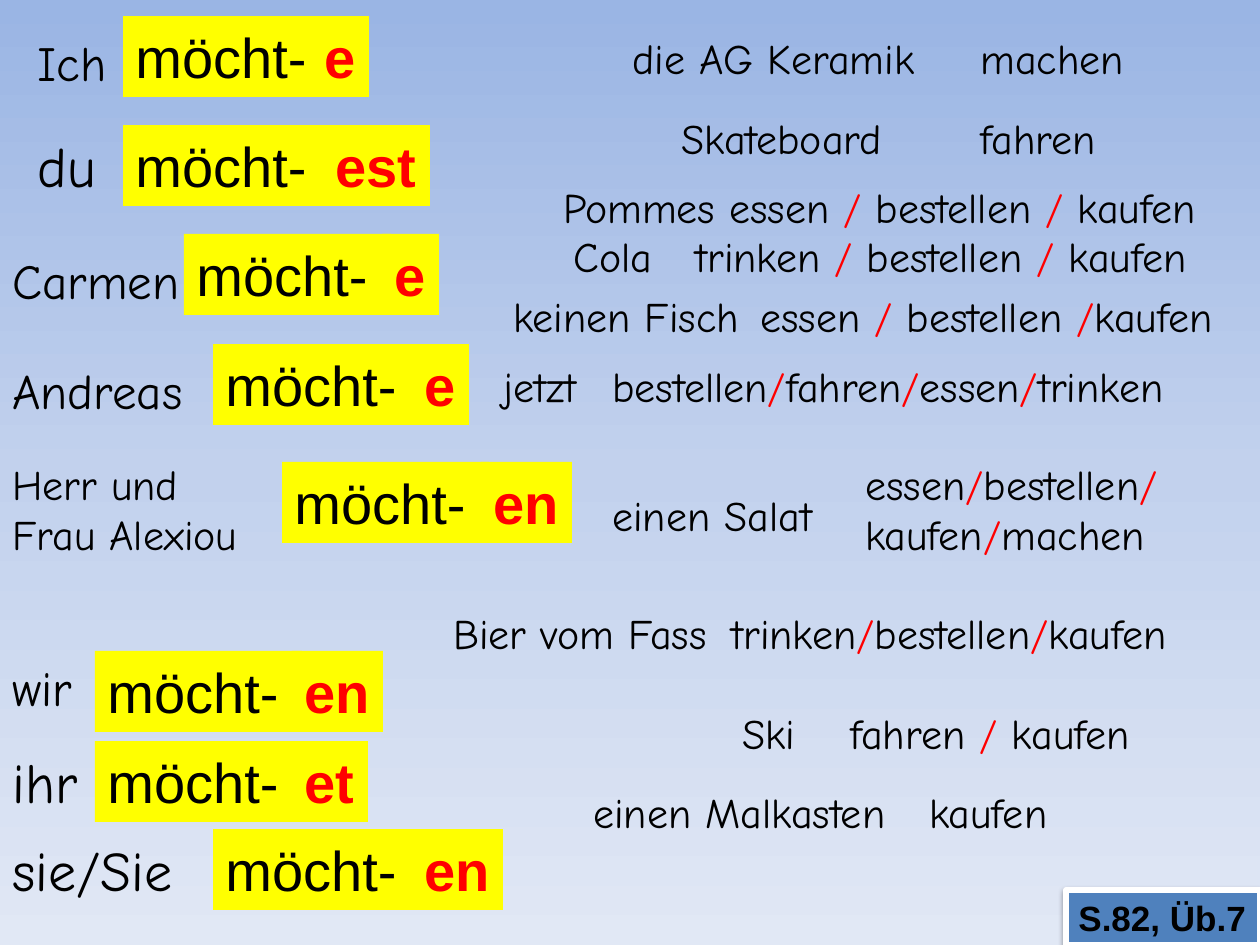
import copy

import lxml.etree
import pptx
import pptx.dml.color
import pptx.enum.shapes
import pptx.enum.text
import pptx.oxml
import pptx.oxml.ns
import pptx.util

EMU_PER_PX = 914400 / 126
LINE_HEIGHTS = {24: 63, 28: 72, 32: 81}

# subject, size, (left, top, width), stem (left, top), ending, ending (left, width)
CONJUGATION = [
    (["Ich"], 28, (25, 26, 121), (123, 16), "e", (312, 57)),
    (["du"], 32, (25, 125, 105), (123, 125), "est", (323, 107)),
    (["Carmen"], 28, (0, 244, 210), (184, 234), "e", (382, 57)),
    (["Andreas"], 28, (0, 354, 217), (213, 344), "e", (412, 57)),
    (["Herr und", "Frau Alexiou"], 24, (0, 452, 287), (282, 462), "en", (481, 91)),
    (["wir"], 28, (0, 651, 97), (95, 651), "en", (292, 91)),
    (["ihr"], 32, (0, 741, 101), (95, 741), "et", (292, 76)),
    (["sie/Sie"], 32, (0, 829, 215), (213, 829), "en", (412, 91)),
]

# top, then object and activity as (lines, left, width, wrap)
ACTIVITIES = [
    (26, (["die AG Keramik"], 620, 329, False), (["machen"], 968, 171, False)),
    (106, (["Skateboard"], 669, 257, False), (["fahren"], 968, 159, False)),
    (175, (["Pommes"], 551, 179, False),
     (["essen / bestellen / kaufen"], 717, 543, False)),
    (224, (["Cola"], 561, 107, False),
     (["trinken / bestellen / kaufen"], 683, 577, False)),
    (284, (["keinen Fisch"], 501, 267, False),
     (["essen / bestellen /kaufen"], 748, 530, False)),
    (354, (["jetzt "], 491, 139, False),
     (["bestellen/fahren/essen/trinken"], 600, 735, True)),
    (483, (["einen Salat"], 600, 246, False), None),
    (452, None, (["essen/bestellen/", "kaufen/machen"], 853, 407, True)),
    (601, (["Bier vom Fass"], 441, 297, False),
     (["trinken/bestellen/kaufen"], 719, 541, True)),
    (701, (["Ski"], 730, 102, False), (["fahren / kaufen"], 838, 340, False)),
    (780, (["einen Malkasten"], 581, 343, False), (["kaufen"], 917, 159, False)),
]


def px(length):
    """Turn a length in px into EMU."""
    return pptx.util.Emu(round(length * EMU_PER_PX))


def color(value):
    """Turn a hex string into a colour."""
    return pptx.dml.color.RGBColor.from_string(value)


class Worksheet:
    """Holds the style and the current page of the deck."""

    black, red, yellow, blue, white = "000000", "FF0000", "FFFF00", "4F81BD", "FFFFFF"
    hand = {"name": "Comic Neue", "bold": False}
    plain = {"name": "Arial", "bold": False}
    strong = {"name": "Arial", "bold": True}

    def __init__(self):
        """Start a deck with one blank page."""
        self.deck = pptx.Presentation()
        self.deck.slide_width, self.deck.slide_height = px(1260), px(945)
        self.page = self.deck.slides.add_slide(self.deck.slide_layouts[6])

    def background(self, values):
        """Fill the page with an even gradient from top to bottom."""
        fill = self.page.background.fill
        fill.gradient()
        fill.gradient_angle = 270
        stops = self.page.element.xpath(".//a:gsLst")[0]
        for _ in values[2:]:
            stops.insert(1, copy.deepcopy(stops[0]))
        for index, (stop, value) in enumerate(zip(fill.gradient_stops, values)):
            stop.position = index / (len(values) - 1)
            stop.color.rgb = color(value)

    def put_lines(self, box, lines, style, size, ink, slash, wrap):
        """Put lines into a box, with slashes in their own colour."""
        frame = box.text_frame
        frame_format = {
            "word_wrap": wrap,
            "auto_size": pptx.enum.text.MSO_AUTO_SIZE.SHAPE_TO_FIT_TEXT,
            "vertical_anchor": pptx.enum.text.MSO_ANCHOR.TOP,
        }
        for name, value in frame_format.items():
            setattr(frame, name, value)
        for index, line in enumerate(lines):
            para = frame.add_paragraph() if index else frame.paragraphs[0]
            para.alignment = pptx.enum.text.PP_ALIGN.LEFT
            for piece in line.replace("/", "\n/\n").split("\n"):
                if not piece:
                    continue
                span = para.add_run()
                span.text = piece
                for name, value in {**style, "size": pptx.util.Pt(size)}.items():
                    setattr(span.font, name, value)
                span.font.color.rgb = color(slash if piece == "/" else ink)

    def text(self, lines, left, top, width, size=24, slash=red, wrap=False):
        """Add a handwritten text box."""
        height = LINE_HEIGHTS[size] + 52 * (len(lines) - 1)
        box = self.page.shapes.add_textbox(px(left), px(top), px(width), px(height))
        self.put_lines(box, lines, self.hand, size, self.black, slash, wrap)

    def card(self, words, left, top, width, height=81, style=strong, size=32,
             ink=red, fill=yellow, wrap=False):
        """Add a filled rectangle with words."""
        box = self.page.shapes.add_shape(
            pptx.enum.shapes.MSO_SHAPE.RECTANGLE, px(left), px(top), px(width), px(height))
        box.shadow.inherit = False
        box.fill.solid()
        box.fill.fore_color.rgb = color(fill)
        box.line.fill.background()
        self.put_lines(box, [words], style, size, ink, ink, wrap)
        return box

    def reference(self, words, left, top, width, height):
        """Add the framed exercise reference with its shadow."""
        box = self.card(words, left, top, width, height, size=20,
                        ink=self.black, fill=self.blue)
        box.line.color.rgb = color(self.white)
        box.line.width = pptx.util.Pt(3)
        tag = pptx.oxml.ns.qn
        effects = box.element.spPr.find(tag("a:effectLst"))
        shadow = lxml.etree.SubElement(
            effects, tag("a:outerShdw"), blurRad="40000", dist="20000",
            dir="5400000", rotWithShape="0")
        shade = lxml.etree.SubElement(shadow, tag("a:srgbClr"), val=self.black)
        lxml.etree.SubElement(shade, tag("a:alpha"), val="38000")


def main():
    """Build the worksheet and save it."""
    sheet = Worksheet()
    sheet.background(["9AB5E4", "C2D1ED", "E1E8F5"])
    for subject, size, place, (left, top), ending, (end_left, end_width) in CONJUGATION:
        sheet.text(subject, *place, size=size, slash=sheet.black)
        sheet.card("möcht-", left, top, 207, style=sheet.plain, ink=sheet.black, wrap=True)
        sheet.card(ending, end_left, top, end_width)
    for top, *parts in ACTIVITIES:
        for lines, left, width, wrap in filter(None, parts):
            sheet.text(lines, left, top, width, wrap=wrap)
    sheet.reference("S.82, Üb.7", 1066, 890, 194, 55)
    sheet.deck.save("out.pptx")


if __name__ == "__main__":
    main()
